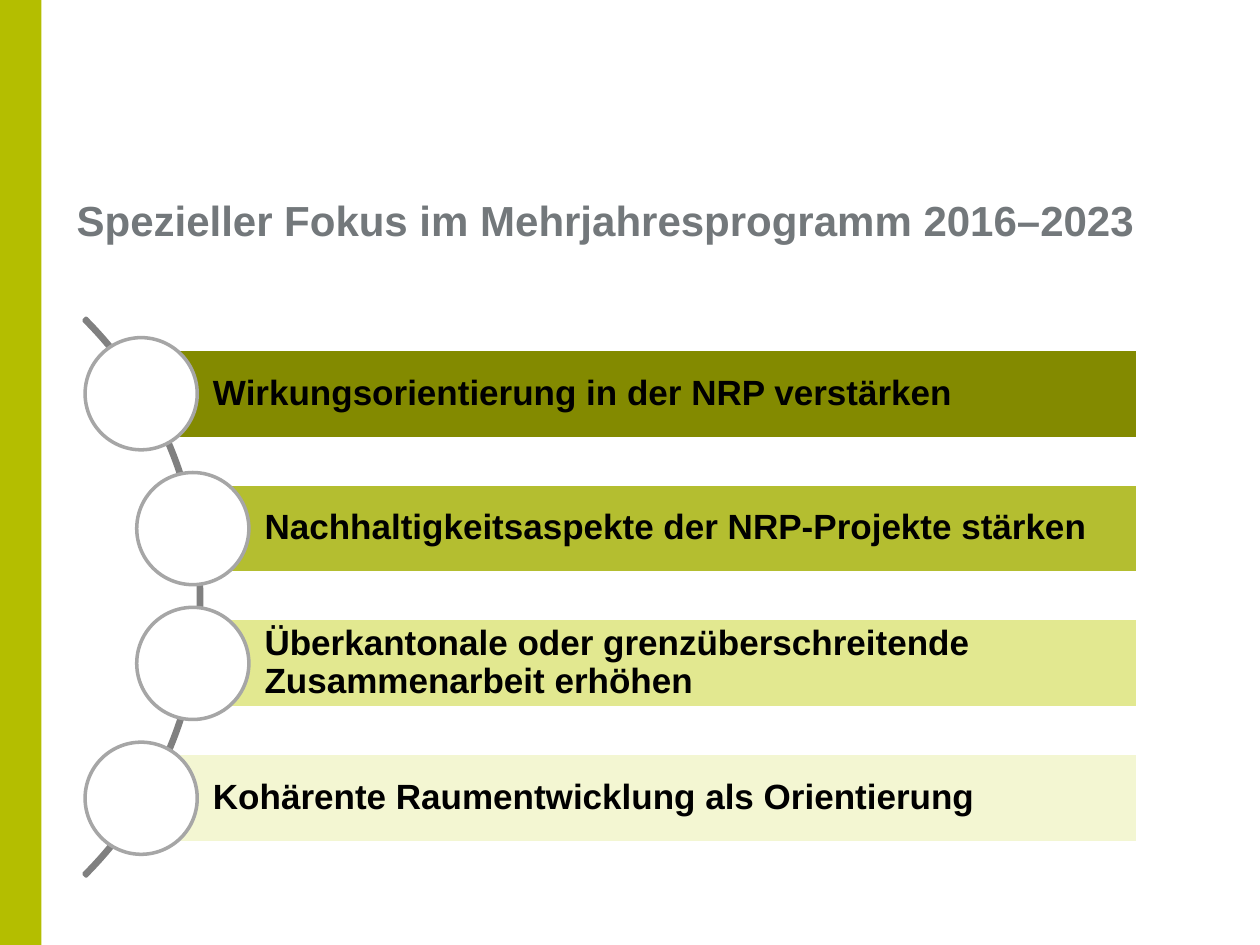
from pptx import Presentation
from pptx.dml.color import RGBColor
from pptx.enum.shapes import MSO_SHAPE
from pptx.enum.text import MSO_ANCHOR, PP_ALIGN
from pptx.util import Inches, Pt

HUES = {
    "lime": "B4BE00", "title": "73787B", "arc": "808080", "ring": "A6A6A6",
    "white": "FFFFFF", "black": "000000",
    "olive": "838A00", "moss": "B4BE30", "pale": "E2E890", "cream": "F3F6D2",
}
ROWS = [
    (1.12, "olive", "Wirkungsorientierung in der NRP verstärken"),
    (1.53, "moss", "Nachhaltigkeitsaspekte der NRP-Projekte stärken"),
    (1.53, "pale", "Überkantonale oder grenzüberschreitende Zusammenarbeit erhöhen"),
    (1.12, "cream", "Kohärente Raumentwicklung als Orientierung"),
]
TOP, STEP, TALL, RIGHT, DISC = 2.77, 1.07, 0.71, 9.03, 0.89


class Deck:
    """Holds the style and the current slide, and draws each kind of element."""

    def __init__(self, slide, font="Arial"):
        self.slide = slide
        self.font = font

    def hue(self, name):
        return RGBColor.from_string(HUES[name])

    def shape(self, kind, box, fill=None, line=None):
        item = self.slide.shapes.add_shape(kind, *map(Inches, box))
        item.shadow.inherit = False
        if fill:
            item.fill.solid()
            item.fill.fore_color.rgb = self.hue(fill)
        else:
            item.fill.background()
        if line:
            item.line.color.rgb = self.hue(line)
            item.line.width = Pt(2)
        else:
            item.line.fill.background()
        return item

    def label(self, item, text, size, color, pads, space=1.0):
        frame = item.text_frame
        frame.word_wrap = True
        frame.vertical_anchor = MSO_ANCHOR.MIDDLE
        (frame.margin_left, frame.margin_top,
         frame.margin_right, frame.margin_bottom) = map(Inches, pads)
        para = frame.paragraphs[0]
        para.alignment = PP_ALIGN.LEFT
        para.line_spacing = space
        run = para.add_run()
        run.text = text
        run.font.name = self.font
        run.font.size = Pt(size)
        run.font.bold = True
        run.font.color.rgb = self.hue(color)

    def title(self, text, box):
        item = self.slide.shapes.add_textbox(*map(Inches, box))
        self.label(item, text, 24, "title", (0.1, 0, 0.1, 0.38))

    def arc(self, box):
        item = self.shape(MSO_SHAPE.BLOCK_ARC, box, line="arc")
        for spot, value in enumerate((189, 27, 0.004)):
            item.adjustments[spot] = value

    def bar(self, left, top, fill, text):
        box = (left, top, RIGHT - left, TALL)
        item = self.shape(MSO_SHAPE.RECTANGLE, box, fill, "white")
        self.label(item, text, 20, "black", (0.57, 0.06, 0.06, 0.06), 0.9)

    def disc(self, mid, top):
        box = (mid - DISC / 2, top + (TALL - DISC) / 2, DISC, DISC)
        self.shape(MSO_SHAPE.OVAL, box, "white", "ring")


def main():
    show = Presentation()
    show.slide_width, show.slide_height = Inches(10), Inches(7.5)
    deck = Deck(show.slides.add_slide(show.slide_layouts[6]))
    deck.shape(MSO_SHAPE.RECTANGLE, (0, 0, 0.33, 7.5), "lime")
    deck.title("Spezieller Fokus im Mehrjahresprogramm 2016–2023",
               (0.51, 1.62, 9.49, 0.63))
    deck.arc((-4.66, 1.61, 6.26, 6.26))
    for index, (left, fill, text) in enumerate(ROWS):
        top = TOP + index * STEP
        deck.bar(left, top, fill, text)
        deck.disc(left, top)
    show.save("out.pptx")


if __name__ == "__main__":
    main()
